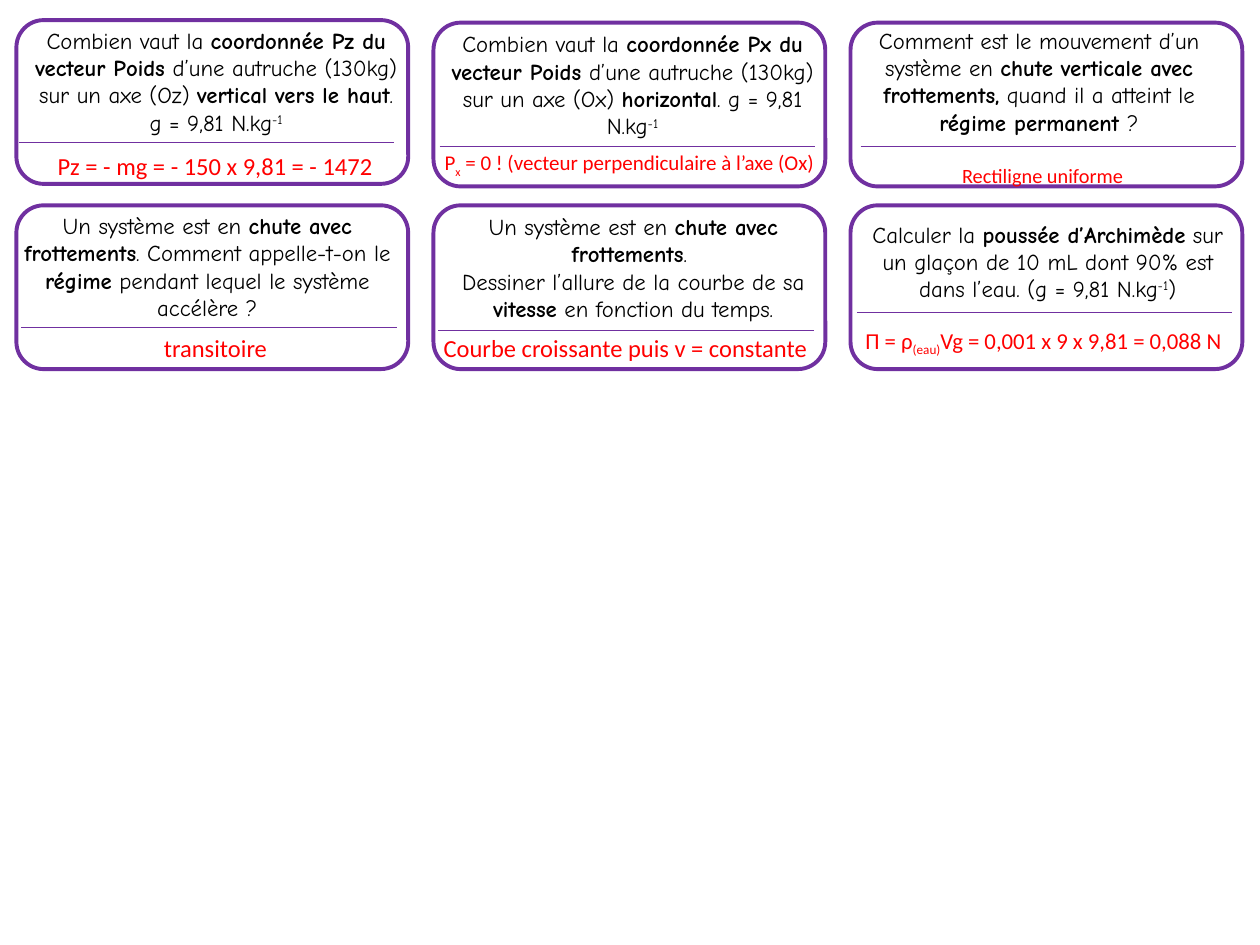
from dataclasses import dataclass

from lxml.etree import SubElement
from pptx import Presentation
from pptx.dml.color import RGBColor
from pptx.enum.shapes import MSO_CONNECTOR, MSO_SHAPE
from pptx.enum.text import MSO_AUTO_SIZE, PP_ALIGN
from pptx.oxml.ns import qn
from pptx.util import Inches, Pt


@dataclass(frozen=True)
class Theme:
    border: RGBColor = RGBColor(0x70, 0x30, 0xA0)
    question: RGBColor = RGBColor(0, 0, 0)
    answer: RGBColor = RGBColor(0xFF, 0, 0)
    question_font: str = "Comic Neue"
    answer_font: str = "Calibri"
    question_size: int = 13
    answer_size: int = 14
    small_size: int = 12
    raised_size: int = 20
    border_width: float = 2.25
    rule_width: float = 0.5


THEME = Theme()
CARD_W, CARD_H, RULE_W = 3.11, 1.3, 2.98
COLUMNS = (0.13, 3.44, 6.75)
BOLD, SUP, SUB = "bold", "sup", "sub"
BASELINES = {SUP: "30000", SUB: "-25000"}

CARDS = [
    dict(
        left=COLUMNS[0], top=0.16, rule=(0.15, 1.13),
        question_box=(0.17, 0.16, 3.09, 0.98),
        question=[["Combien vaut la ", ("coordonnée Pz du vecteur Poids ", BOLD),
                   "d’une autruche (130kg) sur un axe (Oz) ", ("vertical vers le haut", BOLD),
                   ". g = 9,81 N.kg", ("-1", SUP)]],
        answer_box=(0.14, 1.15, 3.18, 0.34),
        answer=[["Pz = - mg = - 150 x 9,81 = - 1472 "]],
    ),
    dict(
        left=COLUMNS[1], top=0.18, rule=(3.49, 1.16),
        question_box=(3.43, 0.19, 3.18, 0.98),
        question=[["Combien vaut la ", ("coordonnée Px du vecteur Poids ", BOLD),
                   "d’une autruche (130kg) sur un axe (Ox) ", ("horizontal", BOLD),
                   ". g = 9,81 N.kg", ("-1", SUP)]],
        answer_box=(3.43, 1.14, 3.27, 0.3),
        answer=[["P", ("x", SUB), " = 0 ! (vecteur perpendiculaire à l’axe (Ox)"]],
        answer_format=dict(size=THEME.small_size, align=PP_ALIGN.LEFT),
    ),
    dict(
        left=COLUMNS[2], top=0.18, rule=(6.83, 1.16),
        question_box=(6.62, 0.16, 3.25, 0.98),
        question=[["Comment est le mouvement d’un système en ",
                   ("chute verticale avec frottements,", BOLD), " quand il a atteint le ",
                   ("régime permanent ", BOLD), "?"]],
        answer_box=(7.08, 1.21, 2.39, 0.33),
        answer=[[("Rectiligne uniforme", SUP)]],
        answer_format=dict(size=THEME.raised_size),
    ),
    dict(
        left=COLUMNS[0], top=1.63, rule=(0.17, 2.6),
        question_box=(-0.04, 1.63, 3.37, 0.98),
        question=[["Un système est en ", ("chute avec frottements", BOLD),
                   ". Comment appelle-t-on le ", ("régime", BOLD),
                   " pendant lequel le système accélère ?"]],
        answer_box=(0.22, 2.59, 2.98, 0.34),
        answer=[["transitoire"]],
    ),
    dict(
        left=COLUMNS[1], top=1.63, rule=(3.48, 2.62),
        question_box=(3.38, 1.64, 3.29, 0.98),
        question=[["Un système est en ", ("chute avec frottements", BOLD), ". "],
                  ["Dessiner l’allure de la courbe de sa ", ("vitesse", BOLD),
                   " en fonction du temps."]],
        answer_box=(3.4, 2.59, 3.13, 0.34),
        answer=[["Courbe croissante puis v = constante"]],
    ),
    dict(
        left=COLUMNS[2], top=1.63, rule=(6.8, 2.48),
        question_box=(6.7, 1.7, 3.23, 0.76),
        question=[["Calculer la ", ("poussée d’Archimède", BOLD),
                   " sur un glaçon de 10 mL dont 90% est dans l’eau. (g = 9,81 N.kg",
                   ("-1", SUP), ")"]],
        answer_box=(6.77, 2.54, 3.17, 0.32),
        answer=[["Π = ρ", ("(eau)", SUB), "Vg = 0,001 x 9 x 9,81 = 0,088 N"]],
        answer_format=dict(size=THEME.question_size, align=PP_ALIGN.LEFT),
    ),
]


def add_text(s, box, paragraphs, *, font=THEME.answer_font, size=THEME.answer_size,
             color=THEME.answer, align=PP_ALIGN.CENTER):
    tf = s.shapes.add_textbox(*map(Inches, box)).text_frame
    tf.word_wrap = True
    tf.auto_size = MSO_AUTO_SIZE.SHAPE_TO_FIT_TEXT
    for i, pieces in enumerate(paragraphs):
        p = tf.add_paragraph() if i else tf.paragraphs[0]
        p.alignment = align
        for piece in pieces:
            text, style = (piece, None) if isinstance(piece, str) else piece
            r = p.add_run()
            r.text = text
            r.font.name = font
            r.font.size = Pt(size)
            r.font.color.rgb = color
            r.font.bold = style == BOLD
            if style in BASELINES:
                r.font._element.set("baseline", BASELINES[style])


def add_frame(s, left, top):
    sp = s.shapes.add_shape(MSO_SHAPE.ROUNDED_RECTANGLE, Inches(left), Inches(top),
                            Inches(CARD_W), Inches(CARD_H))
    sp.shadow.inherit = False
    sp.fill.background()
    sp.line.color.rgb = THEME.border
    sp.line.width = Pt(THEME.border_width)


def add_rule(s, left, top):
    line = s.shapes.add_connector(MSO_CONNECTOR.STRAIGHT, Inches(left), Inches(top),
                                  Inches(left + RULE_W), Inches(top))
    line.line.color.rgb = THEME.border
    line.line.width = Pt(THEME.rule_width)
    SubElement(line._element.spPr, qn("a:effectLst"))


def add_card(s, left, top, rule, question_box, question, answer_box, answer,
             answer_format=None):
    add_frame(s, left, top)
    add_text(s, question_box, question, font=THEME.question_font,
             size=THEME.question_size, color=THEME.question)
    add_text(s, answer_box, answer, **(answer_format or {}))
    add_rule(s, *rule)


def main():
    prs = Presentation()
    prs.slide_width, prs.slide_height = Inches(10), Inches(7.5)
    s = prs.slides.add_slide(prs.slide_layouts[6])
    for card in CARDS:
        add_card(s, **card)
    prs.save("out.pptx")


if __name__ == "__main__":
    main()
